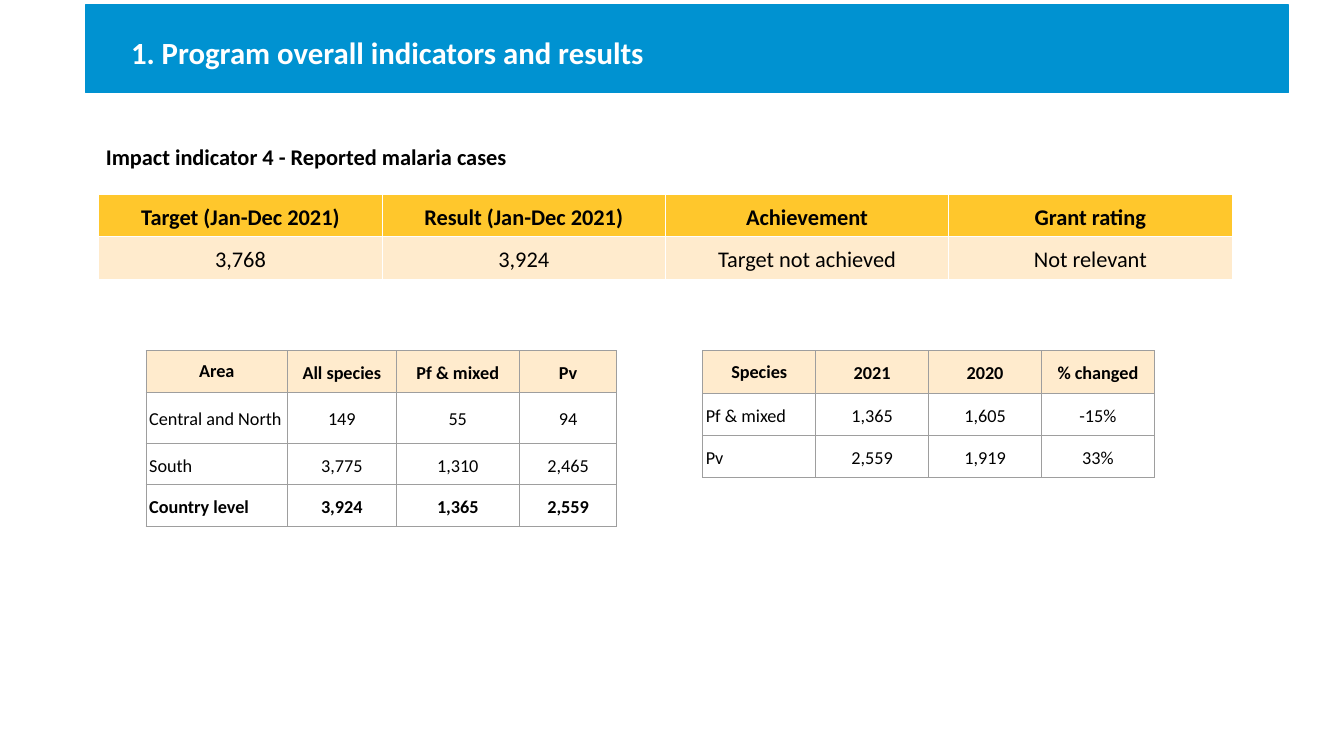
from lxml import etree
from pptx import Presentation
from pptx.dml.color import RGBColor
from pptx.enum import shapes, text
from pptx.oxml import ns
from pptx.util import Inches, Pt

# Content
TITLE = "1. Program overall indicators and results"
INDICATOR = "Impact indicator 4 - Reported malaria cases"
BLUE, GOLD, CREAM, GREY = "0092D1", "FFC72C", "FFEBCD", "9E9E9E"
WHITE, BLACK = "FFFFFF", "000000"

TABLES = [
    dict(left=0.98, top=1.93, columns=[2.81] * 4, heights=[0.42, 0.42],
         size=16, border=WHITE, head=GOLD, body=CREAM,
         bold_rows={0}, left_labels=False, single_spaced_corner=False,
         rows=[("Target (Jan-Dec 2021)", "Result (Jan-Dec 2021)",
                "Achievement", "Grant rating"),
               ("3,768", "3,924", "Target not achieved", "Not relevant")]),
    dict(left=1.45, top=3.48, columns=[1.4, 1.08, 1.22, 0.97],
         heights=[0.41, 0.51, 0.41, 0.41],
         size=13, border=GREY, head=CREAM, body=None,
         bold_rows={0, 3}, left_labels=True, single_spaced_corner=True,
         rows=[("Area", "All species", "Pf & mixed", "Pv"),
               ("Central and North", "149", "55", "94"),
               ("South", "3,775", "1,310", "2,465"),
               ("Country level", "3,924", "1,365", "2,559")]),
    dict(left=6.97, top=3.48, columns=[1.12] * 4, heights=[0.42] * 3,
         size=13, border=GREY, head=CREAM, body=None,
         bold_rows={0}, left_labels=True, single_spaced_corner=True,
         rows=[("Species", "2021", "2020", "% changed"),
               ("Pf & mixed", "1,365", "1,605", "-15%"),
               ("Pv", "2,559", "1,919", "33%")]),
]


def color(value):
    return RGBColor.from_string(value)


def write(frame, words, size, fill, bold, spacing, align=text.PP_ALIGN.LEFT):
    paragraph = frame.paragraphs[0]
    paragraph.text = words
    paragraph.alignment = align
    paragraph.line_spacing = spacing
    font = paragraph.font
    font.name, font.size, font.bold = "Calibri", Pt(size), bold
    font.color.rgb = color(fill)


def set_margins(owner, left, top, right, bottom):
    owner.margin_left, owner.margin_top = Inches(left), Inches(top)
    owner.margin_right, owner.margin_bottom = Inches(right), Inches(bottom)


def draw_borders(cell, value):
    properties = cell._tc.get_or_add_tcPr()
    for position, side in enumerate(("lnL", "lnR", "lnT", "lnB")):
        line = etree.Element(ns.qn(f"a:{side}"), w=str(Pt(0.83)))
        solid = etree.SubElement(line, ns.qn("a:solidFill"))
        etree.SubElement(solid, ns.qn("a:srgbClr"), val=value)
        properties.insert(position, line)


def add_results(slide, spec):
    rows, columns, heights = spec["rows"], spec["columns"], spec["heights"]
    table = slide.shapes.add_table(
        len(rows), len(columns), Inches(spec["left"]), Inches(spec["top"]),
        Inches(sum(columns)), Inches(sum(heights))).table
    table.horz_banding = table.first_row = False
    for column, width in zip(table.columns, columns):
        column.width = Inches(width)
    for r, values in enumerate(rows):
        table.rows[r].height = Inches(heights[r])
        fill = spec["body"] if r else spec["head"]
        for c, value in enumerate(values):
            cell = table.cell(r, c)
            set_margins(cell, 0.03, 0.02, 0.03, 0.02)
            cell.vertical_anchor = text.MSO_ANCHOR.MIDDLE
            if fill:
                cell.fill.solid()
                cell.fill.fore_color.rgb = color(fill)
            else:
                cell.fill.background()
            draw_borders(cell, spec["border"])
            is_label = spec["left_labels"] and r > 0 and c == 0
            is_corner = spec["single_spaced_corner"] and r == c == 0
            write(cell.text_frame, value, spec["size"], BLACK,
                  r in spec["bold_rows"], 1.0 if is_corner else 1.15,
                  text.PP_ALIGN.LEFT if is_label else text.PP_ALIGN.CENTER)


def main():
    deck = Presentation()
    deck.slide_width, deck.slide_height = Inches(13.33), Inches(7.5)
    slide = deck.slides.add_slide(deck.slide_layouts[6])

    # Indicator heading
    heading = slide.shapes.add_textbox(
        Inches(1.05), Inches(1.34), Inches(11.93), Inches(0.5)).text_frame
    heading.word_wrap = True
    set_margins(heading, 0, 0, 0, 0)
    write(heading, INDICATOR, 16, BLACK, True, 1.3)

    # Title band
    band = slide.shapes.add_shape(
        shapes.MSO_SHAPE.RECTANGLE,
        Inches(0.85), Inches(0.05), Inches(11.93), Inches(0.87))
    band.shadow.inherit = False
    band.fill.solid()
    band.fill.fore_color.rgb = color(BLUE)
    band.line.color.rgb = color(BLUE)
    band.line.width = Pt(0.75)
    band.text_frame.vertical_anchor = text.MSO_ANCHOR.MIDDLE
    set_margins(band.text_frame, 0.45, 0, 0, 0)
    write(band.text_frame, TITLE, 22, WHITE, True, 1.2)

    # Result tables
    for spec in TABLES:
        add_results(slide, spec)

    deck.save("out.pptx")


if __name__ == "__main__":
    main()
